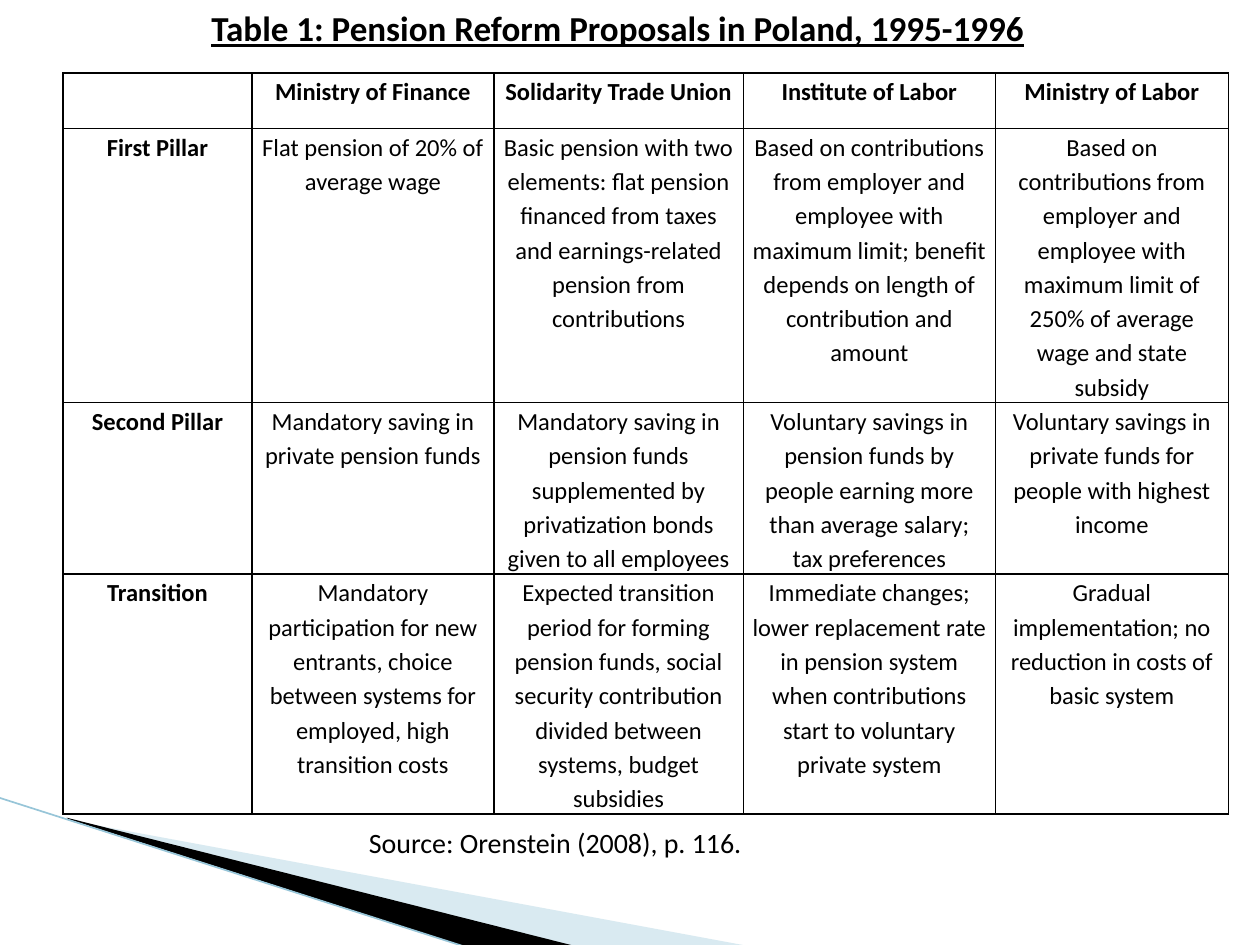
from lxml.etree import SubElement
from pptx import Presentation
from pptx.dml.color import RGBColor
from pptx.enum.shapes import MSO_CONNECTOR
from pptx.enum.text import MSO_ANCHOR, MSO_AUTO_SIZE, PP_ALIGN
from pptx.oxml.ns import qn
from pptx.util import Inches, Pt

COLORS = {"text": "000000", "border": "000000", "pale": "A0CBDC",
          "black": "000000", "edge": "97C5D8"}

COLUMNS = [1.5, 1.92, 1.98, 2, 1.85]
ROWS = [0.44, 1.98, 1.32, 1.76]
PROPOSALS = [
    ["", "Ministry of Finance", "Solidarity Trade Union",
     "Institute of Labor", "Ministry of Labor"],
    ["First Pillar",
     "Flat pension of 20% of average wage",
     "Basic pension with two elements: flat pension financed from taxes "
     "and earnings-related pension from contributions",
     "Based on contributions from employer and employee with maximum limit; "
     "benefit depends on length of contribution and amount",
     "Based on contributions from employer and employee with maximum limit "
     "of 250% of average wage and state subsidy"],
    ["Second Pillar",
     "Mandatory saving in private pension funds",
     "Mandatory saving in pension funds supplemented by privatization bonds "
     "given to all employees",
     "Voluntary savings in pension funds by people earning more than "
     "average salary; tax preferences",
     "Voluntary savings in private funds for people with highest income"],
    ["Transition",
     "Mandatory participation for new entrants, choice between systems for "
     "employed, high transition costs",
     "Expected transition period for forming pension funds, social security "
     "contribution divided between systems, budget subsidies",
     "Immediate changes; lower replacement rate in pension system when "
     "contributions start to voluntary private system",
     "Gradual implementation; no reduction in costs of basic system"],
]


class Deck:
    """Holds the style and the current slide, and draws each kind of element."""

    font = "Calibri"

    def __init__(self, width, height):
        self.prs = Presentation()
        self.prs.slide_width = Inches(width)
        self.prs.slide_height = Inches(height)
        self.s = self.prs.slides.add_slide(self.prs.slide_layouts[6])

    def rgb(self, name):
        return RGBColor.from_string(COLORS[name])

    def style(self, font, size, bold=False, underline=False):
        font.name = self.font
        font.size = Pt(size)
        font.bold = bold
        font.underline = underline
        font.color.rgb = self.rgb("text")

    def wedge(self, points, color, opacity=100):
        pts = [(Inches(x), Inches(y)) for x, y in points]
        builder = self.s.shapes.build_freeform(*pts[0])
        builder.add_line_segments(pts[1:], close=True)
        sp = builder.convert_to_shape()
        sp.shadow.inherit = False
        sp.fill.solid()
        sp.fill.fore_color.rgb = self.rgb(color)
        sp.line.fill.background()
        if opacity < 100:
            clr = sp.fill._xPr.find(".//" + qn("a:srgbClr"))
            SubElement(clr, qn("a:alpha"), val=str(opacity * 1000))

    def line(self, start, end, color, width):
        ends = [Inches(v) for v in (*start, *end)]
        cn = self.s.shapes.add_connector(MSO_CONNECTOR.STRAIGHT, *ends)
        cn.line.color.rgb = self.rgb(color)
        cn.line.width = Pt(width)
        SubElement(cn._element.spPr, qn("a:effectLst"))

    def text(self, box, text, size, **look):
        tb = self.s.shapes.add_textbox(*[Inches(v) for v in box])
        tf = tb.text_frame
        tf.word_wrap = True
        tf.auto_size = MSO_AUTO_SIZE.SHAPE_TO_FIT_TEXT
        tf.vertical_anchor = MSO_ANCHOR.MIDDLE
        tf.text = text
        self.style(tf.paragraphs[0].runs[0].font, size, **look)

    def borders(self, cell, width):
        tcPr = cell._tc.get_or_add_tcPr()
        for i, side in enumerate(("lnL", "lnR", "lnT", "lnB")):
            ln = tcPr.makeelement(qn("a:" + side), {"w": str(Pt(width))})
            fill = SubElement(ln, qn("a:solidFill"))
            SubElement(fill, qn("a:srgbClr"), val=COLORS["border"])
            tcPr.insert(i, ln)

    def cell(self, cell, text, size, bold):
        cell.margin_left = cell.margin_right = Inches(0.07)
        cell.margin_top = cell.margin_bottom = 0
        cell.fill.background()
        self.borders(cell, 1)
        cell.text_frame.text = text
        p = cell.text_frame.paragraphs[0]
        p.alignment = PP_ALIGN.CENTER
        p.line_spacing = 1.15
        for font in [r.font for r in p.runs] or [p.font]:
            self.style(font, size, bold)

    def table(self, left, top, columns, rows, data, size):
        frame = self.s.shapes.add_table(
            len(rows), len(columns), Inches(left), Inches(top),
            Inches(sum(columns)), Inches(sum(rows)))
        table = frame.table
        table.first_row = table.horz_banding = False
        for column, width in zip(table.columns, columns):
            column.width = Inches(width)
        for i, (height, texts) in enumerate(zip(rows, data)):
            table.rows[i].height = Inches(height)
            for j, text in enumerate(texts):
                self.cell(table.cell(i, j), text, size, i == 0 or j == 0)


def main():
    deck = Deck(10, 7.5)
    deck.wedge([(0.55, 6.51), (5.95, 7.51), (4.56, 7.51), (0.55, 6.5)], "pale", 40)
    deck.wedge([(0.53, 6.49), (4.57, 7.51), (3.72, 7.52), (0.54, 6.5)], "black")
    deck.line((-0.01, 6.33), (3.71, 7.52), "edge", 0.95)
    deck.table(0.5, 0.58, COLUMNS, ROWS, PROPOSALS, 14)
    deck.text((2.83, 6.5, 5.5, 0.37), "Source: Orenstein (2008), p. 116.", 16)
    deck.text((1.58, 0, 7.42, 0.44),
              "Table 1: Pension Reform Proposals in Poland, 1995-1996",
              20, bold=True, underline=True)
    deck.prs.save("out.pptx")


if __name__ == "__main__":
    main()
